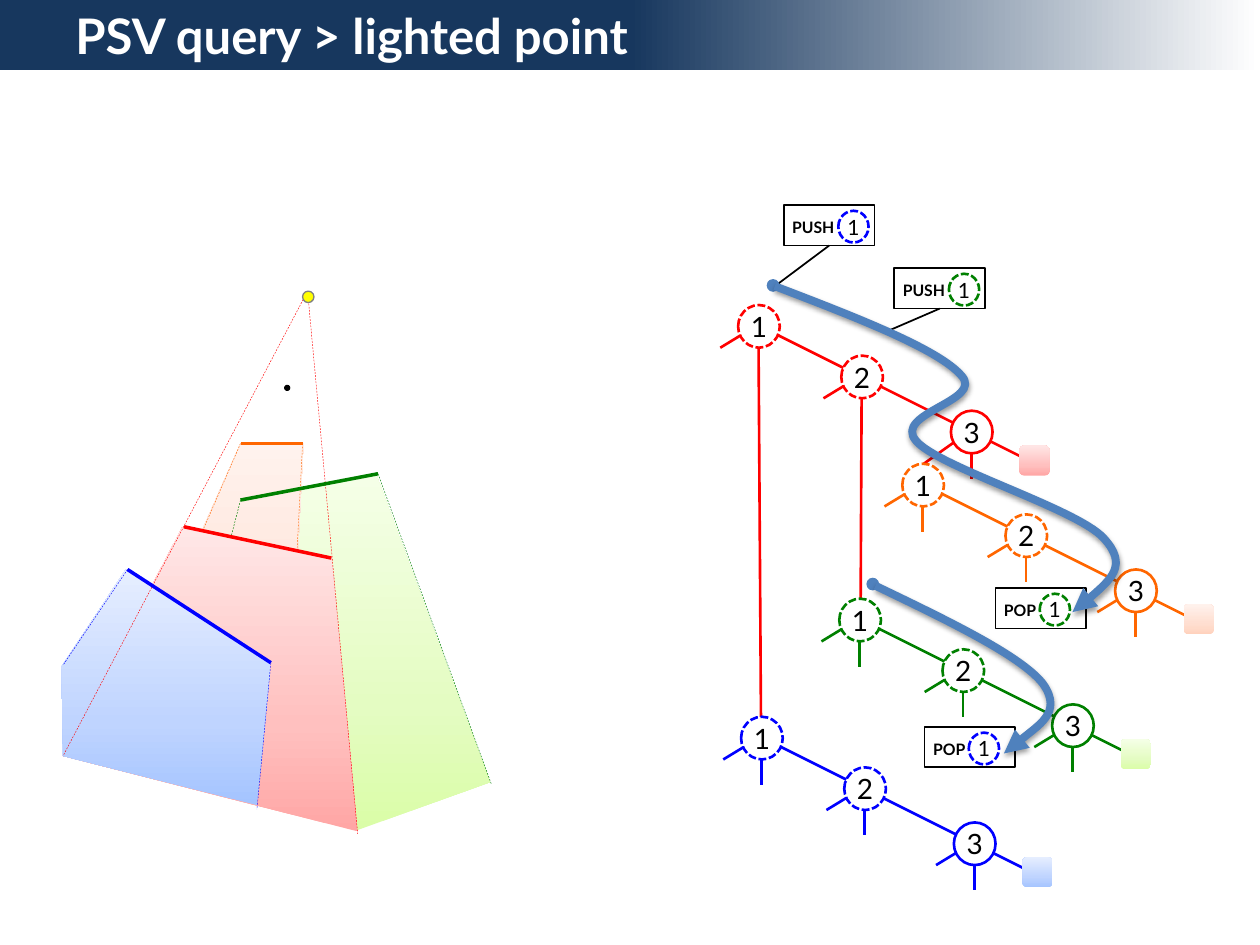
from copy import deepcopy

from lxml.etree import SubElement
from pptx import Presentation
from pptx.dml.color import RGBColor
from pptx.enum.dml import MSO_LINE
from pptx.enum.shapes import MSO_CONNECTOR, MSO_SHAPE
from pptx.enum.text import MSO_ANCHOR, PP_ALIGN
from pptx.oxml.ns import qn
from pptx.util import Cm, Pt

theme = {
    "font": "Lato",
    "sizes": {"title": 28, "node": 16, "tag node": 12, "tag": 9},
    "colors": {
        "red": "FF0000", "orange": "FF6600", "green": "008000", "blue": "0000FF",
        "black": "000000", "white": "FFFFFF", "yellow": "FFFF00",
        "gray": "808080", "route": "4F81BD",
    },
    "ramps": {
        "red": [(0, "FFA6A5"), (0.35, "FFC0BF"), (1, "FFE7E7")],
        "orange": [(0, "FFD2BD"), (0.35, "FFDED0"), (1, "FFF2ED")],
        "green": [(0, "DAFDA7"), (0.35, "E4FCC2"), (1, "F5FFE7")],
        "blue": [(0, "A4C4FF"), (0.35, "BFD4FF"), (1, "E6EEFF")],
        "header": [(0.5, "17375E"), (1, "FFFFFF")],
    },
}
colors = {name: RGBColor.from_string(code) for name, code in theme["colors"].items()}

deck = Presentation()
deck.slide_width, deck.slide_height = Cm(25.4), Cm(19.05)
slide = deck.slides.add_slide(deck.slide_layouts[6])
shapes = slide.shapes


def write(holder, text, *, size, color="black", bold=False, align=PP_ALIGN.LEFT,
          anchor=MSO_ANCHOR.MIDDLE, insets=(0, 0)):
    frame = holder.text_frame
    frame.word_wrap = True
    frame.vertical_anchor = anchor
    frame.margin_left = frame.margin_right = Cm(insets[0])
    frame.margin_top = frame.margin_bottom = Cm(insets[1])
    paragraph = frame.paragraphs[0]
    paragraph.alignment = align
    run = paragraph.add_run()
    run.text = text
    run.font.name = theme["font"]
    run.font.size = Pt(theme["sizes"][size])
    run.font.bold = bold
    run.font.color.rgb = colors[color]


def draw_line(start, end, color, width, dash=None):
    link = shapes.add_connector(MSO_CONNECTOR.STRAIGHT, *map(Cm, start + end))
    link.line.color.rgb = colors[color]
    link.line.width = Pt(width)
    link.line.dash_style = dash
    SubElement(link.element.find(qn("p:spPr")), qn("a:effectLst"))
    return link


shaded = []

regions = [
    ("green", [(4.85, 10.08), (3.15, 15.7), (7.19, 16.74), (9.88, 15.77), (7.59, 9.58)]),
    ("orange", [(4.85, 8.94), (6.12, 8.94), (5.74, 16.36), (1.98, 15.42)]),
    ("red", [(3.68, 10.62), (6.68, 11.25), (7.21, 16.76), (1.27, 15.24)]),
    ("blue", [(2.54, 11.48), (5.46, 13.34), (5.18, 16.23), (1.27, 15.24), (1.24, 13.44)]),
]
for hue, corners in regions:
    first, *others = [tuple(map(Cm, corner)) for corner in corners]
    outline = shapes.build_freeform(*first)
    outline.add_line_segments(others, close=True)
    shaded.append((outline.convert_to_shape(), hue, 90))

light = (6.2, 5.87)
rays = [
    ("red", light, (7.21, 16.81)),
    ("red", light, (1.27, 15.24)),
    ("blue", (2.57, 11.48), (1.27, 13.41)),
    ("blue", (5.46, 13.36), (5.18, 16.31)),
    ("green", (4.85, 10.08), (4.65, 10.85)),
    ("green", (7.62, 9.55), (9.91, 15.82)),
    ("orange", (4.85, 8.94), (4.09, 10.69)),
    ("orange", (6.1, 8.94), (5.99, 11.07)),
]
walls = [
    ("red", (3.71, 10.62), (6.68, 11.25)),
    ("blue", (2.57, 11.48), (5.46, 13.36)),
    ("green", (4.85, 10.08), (7.62, 9.55)),
    ("orange", (4.85, 8.94), (6.1, 8.94)),
]
for hue, start, end in rays:
    draw_line(start, end, hue, 0.25, MSO_LINE.DASH)
for hue, start, end in walls:
    draw_line(start, end, hue, 2)

tree_roots = {"red": (14.88, 6.15), "orange": (18.19, 9.35),
              "green": (16.92, 12.07), "blue": (14.94, 14.45)}
node_offsets = [(0, 0), (2.08, 1.02), (4.29, 2.13)]
subtree_tops = {("red", 1, "middle"): (15.34, 14.45),
                ("red", 2, "middle"): (17.35, 12.07),
                ("red", 3, "left"): (18.62, 9.35)}
discs = []
for hue, (root_x, root_y) in tree_roots.items():
    draw_line((root_x + 0.45, root_y + 0.43), (root_x + 5.69, root_y + 3.05), hue, 1.5)
    leaf = shapes.add_shape(MSO_SHAPE.ROUNDED_RECTANGLE, Cm(root_x + 5.67),
                            Cm(root_y + 2.83), Cm(0.61), Cm(0.61))
    shaded.append((leaf, hue, 90))
    for number, (dx, dy) in enumerate(node_offsets, 1):
        x, y = root_x + dx, root_y + dy
        middle_end = subtree_tops.get((hue, number, "middle"), (x + 0.41, y + 1.37))
        left_end = subtree_tops.get((hue, number, "left"), (x - 0.36, y + 0.86))
        draw_line((x + 0.41, y + 0.61), middle_end, hue, 1.5)
        draw_line((x + 0.38, y + 0.41), left_end, hue, 1.5)
        discs.append((x, y, 0.84, 0.86, str(number), "node", hue))

tags = [
    ("PUSH", "blue", 15.8, 4.14, 1.1, (15.62, 5.77)),
    ("PUSH", "green", 18.03, 5.41, 1.1, (17.88, 6.68)),
    ("POP", "blue", 18.64, 14.66, 0.89, None),
    ("POP", "green", 20.07, 11.86, 0.89, None),
]
for action, hue, x, y, disc_dx, target in tags:
    caption = shapes.add_textbox(Cm(x - 0.08), Cm(y + 0.13), Cm(2.01), Cm(0.64))
    write(caption, action, size="tag", bold=True, anchor=MSO_ANCHOR.TOP, insets=(0.25, 0.13))
    frame_box = shapes.add_shape(MSO_SHAPE.RECTANGLE, Cm(x), Cm(y), Cm(1.83), Cm(0.81))
    frame_box.shadow.inherit = False
    frame_box.fill.background()
    frame_box.line.color.rgb = colors["black"]
    frame_box.line.width = Pt(1)
    discs.append((x + disc_dx, y + 0.11, 0.61, 0.64, "1", "tag node", hue))
    if target:
        pointer = draw_line(target, (x + 0.91, y + 0.81), "black", 1)
        pointer.end_connect(frame_box, 2)

for x, y, width, height, number, size, hue in discs:
    disc = shapes.add_shape(MSO_SHAPE.OVAL, Cm(x), Cm(y), Cm(width), Cm(height))
    disc.shadow.inherit = False
    disc.fill.solid()
    disc.fill.fore_color.rgb = colors["white"]
    disc.line.color.rgb = colors[hue]
    disc.line.width = Pt(1.5)
    if number != "3":
        disc.line.dash_style = MSO_LINE.SQUARE_DOT
    write(disc, number, size=size, align=PP_ALIGN.CENTER)

dots = [
    (6.1, 5.87, 0.23, "yellow", "gray"),
    (5.74, 7.77, 0.1, "black", "black"),
    (15.47, 5.64, 0.23, "route", "route"),
    (17.48, 11.66, 0.23, "route", "route"),
]
for x, y, diameter, inside, rim in dots:
    dot = shapes.add_shape(MSO_SHAPE.OVAL, Cm(x), Cm(y), Cm(diameter), Cm(diameter))
    dot.shadow.inherit = False
    dot.fill.solid()
    dot.fill.fore_color.rgb = colors[inside]
    dot.line.color.rgb = colors[rim]
    dot.line.width = Pt(0.75)

routes = [
    [(17.65, 11.81), (19.13, 12.52), (20.6, 13.23), (21.03, 13.79),
     (21.44, 14.38), (20.24, 15.19), (20.24, 15.19)],
    [(15.62, 5.77), (17.27, 6.4), (18.92, 7.04), (19.38, 7.57),
     (19.86, 8.08), (17.98, 8.33), (18.47, 8.89),
     (18.92, 9.42), (21.72, 10.26), (22.25, 10.85),
     (22.76, 11.4), (22.2, 11.89), (21.62, 12.34)],
]
for controls in routes:
    first, *others = [tuple(map(Cm, control)) for control in controls]
    outline = shapes.build_freeform(*first)
    outline.add_line_segments(others, close=False)
    route = outline.convert_to_shape()
    track = route.element.find(".//" + qn("a:path"))
    steps = track.findall(qn("a:lnTo"))
    for i in range(0, len(steps), 3):
        bend = SubElement(track, qn("a:cubicBezTo"))
        for step in steps[i:i + 3]:
            bend.append(step[0])
            track.remove(step)
    route.fill.background()
    route.line.color.rgb = colors["route"]
    route.line.width = Pt(4.5)
    SubElement(route.element.find(".//" + qn("a:ln")), qn("a:tailEnd"), type="triangle")
    route.shadow.inherit = False
    shade = SubElement(route.element.find(".//" + qn("a:effectLst")), qn("a:outerShdw"),
                       blurRad="40000", dist="20000", dir="5400000", rotWithShape="0")
    shade_color = SubElement(shade, qn("a:srgbClr"), val=theme["colors"]["black"])
    SubElement(shade_color, qn("a:alpha"), val="38000")

header = shapes.add_shape(MSO_SHAPE.RECTANGLE, Cm(0), Cm(-0.03), Cm(25.4), Cm(1.45))
write(header, "PSV query > lighted point", size="title", color="white", bold=True,
      insets=(1.52, 0.13))
shaded.append((header, "header", 0))

for area, ramp, angle in shaded:
    area.shadow.inherit = False
    area.line.fill.background()
    area.fill.gradient()
    area.fill.gradient_angle = angle
    stop_list = area.element.find(".//" + qn("a:gsLst"))
    while len(stop_list) < len(theme["ramps"][ramp]):
        stop_list.append(deepcopy(stop_list[0]))
    for stop, (position, code) in zip(area.fill.gradient_stops, theme["ramps"][ramp]):
        stop.position = position
        stop.color.rgb = RGBColor.from_string(code)

deck.save("out.pptx")
